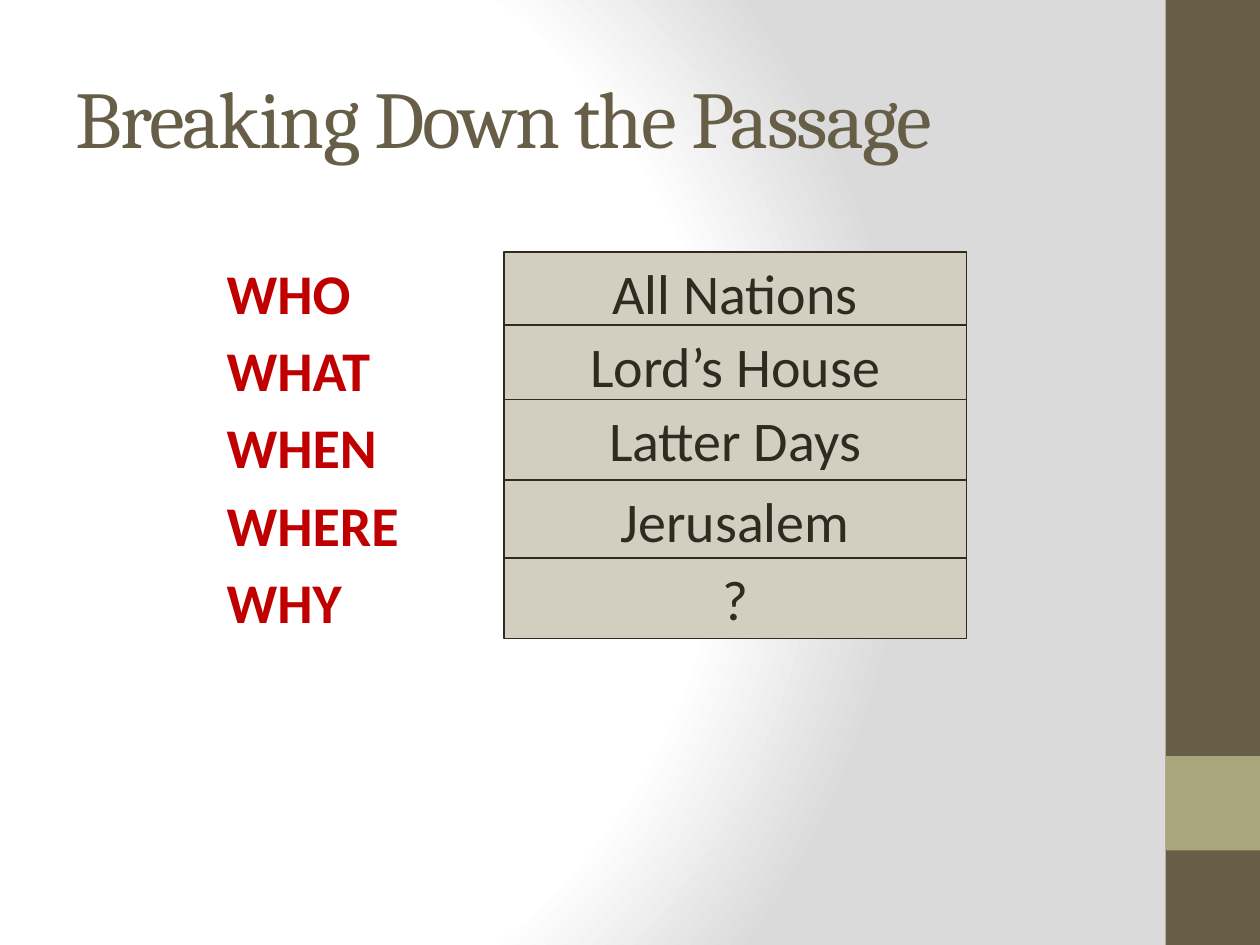
from pptx import Presentation
from pptx.dml.color import RGBColor
from pptx.enum.shapes import MSO_SHAPE as Shape
from pptx.enum.text import MSO_ANCHOR as Anchor, MSO_AUTO_SIZE as AutoSize, PP_ALIGN as Align
from pptx.oxml import parse_xml
from pptx.oxml.ns import nsdecls
from pptx.util import Inches, Pt

BROWN = RGBColor(0x67, 0x5E, 0x47)
OLIVE = RGBColor(0xA9, 0xA5, 0x7C)
RED = RGBColor(0xC0, 0x00, 0x00)
SAND = RGBColor(0xD3, 0xCE, 0xBF)
INK = RGBColor(0x2F, 0x2B, 0x20)

QUESTIONS = ["WHO", "WHAT", "WHEN", "WHERE", "WHY"]
ANSWERS = [
    (2, "All Nations"),
    (2.58, "Lord’s House"),
    (3.17, "Latter Days"),
    (3.81, "Jerusalem"),
    (4.43, "?"),
]
GRADIENT_STOPS = [(0, "FFFFFF"), (75, "FFFFFF"), (100, "DADADA")]


def write_text(frame, lines, size=32, font="Calibri", color=INK, bold=False,
               align=Align.LEFT, anchor=Anchor.TOP, gap=0, indent=0, tracking=0):
    """Fill a text frame; gap and tracking are in points, indent in inches."""
    frame.word_wrap = True
    frame.vertical_anchor = anchor
    for index, line in enumerate(lines):
        para = frame.add_paragraph() if index else frame.paragraphs[0]
        para.alignment = align
        if index and gap:
            para.space_before = Pt(gap)
        if indent:
            para._p.get_or_add_pPr().set("marL", str(Inches(indent)))
        span = para.add_run()
        span.text = line
        span.font.size = Pt(size)
        span.font.name = font
        span.font.bold = bold
        span.font.color.rgb = color
        if tracking:
            span.font._element.set("spc", str(tracking * 100))


def add_box(page, left, top, width, height, fill, line=None):
    box = page.shapes.add_shape(
        Shape.RECTANGLE, Inches(left), Inches(top), Inches(width), Inches(height))
    box.shadow.inherit = False
    box.fill.solid()
    box.fill.fore_color.rgb = fill
    if line is None:
        box.line.fill.background()
    else:
        box.line.color.rgb = line
        box.line.width = Pt(0.75)
    return box


def add_text(page, left, top, width, height, lines, **style):
    box = page.shapes.add_textbox(
        Inches(left), Inches(top), Inches(width), Inches(height))
    write_text(box.text_frame, lines, **style)


def paint_background(page):
    """Give the page a circular gradient centred left of the middle."""
    stops = "".join(
        f'<a:gs pos="{position * 1000}"><a:srgbClr val="{color}"/></a:gs>'
        for position, color in GRADIENT_STOPS)
    page.element.cSld.insert(0, parse_xml(
        f'<p:bg {nsdecls("p", "a")}><p:bgPr><a:gradFill rotWithShape="1">'
        f'<a:gsLst>{stops}</a:gsLst><a:path path="circle">'
        '<a:fillToRect l="20000" t="50000" r="100000" b="50000"/></a:path>'
        '</a:gradFill><a:effectLst/></p:bgPr></p:bg>'))


def add_side_band(page, left, top, width, height):
    add_box(page, left, top, width, height, BROWN)
    add_box(page, left, top + height - 2 * width, width, width, OLIVE)


def add_answers(page, left, width, height):
    for top, answer in ANSWERS:
        box = add_box(page, left, top, width, height, SAND, line=INK)
        write_text(box.text_frame, [answer], align=Align.CENTER)
        box.text_frame.auto_size = AutoSize.SHAPE_TO_FIT_TEXT


def main():
    deck = Presentation()
    deck.slide_width, deck.slide_height = Inches(10), Inches(7.5)
    page = deck.slides.add_slide(deck.slide_layouts[6])
    paint_background(page)
    add_side_band(page, 9.25, 0, 0.75, 7.5)
    add_text(page, 0.5, 0.3, 8.33, 1.25, ["Breaking Down the Passage"], size=46,
             font="Cambria", color=BROWN, anchor=Anchor.MIDDLE, tracking=-1)
    add_text(page, 1.58, 2, 1.75, 3.25, QUESTIONS, color=RED, bold=True,
             gap=5.8, indent=0.12)
    add_answers(page, 4, 3.67, 0.64)
    deck.save("out.pptx")


if __name__ == "__main__":
    main()
